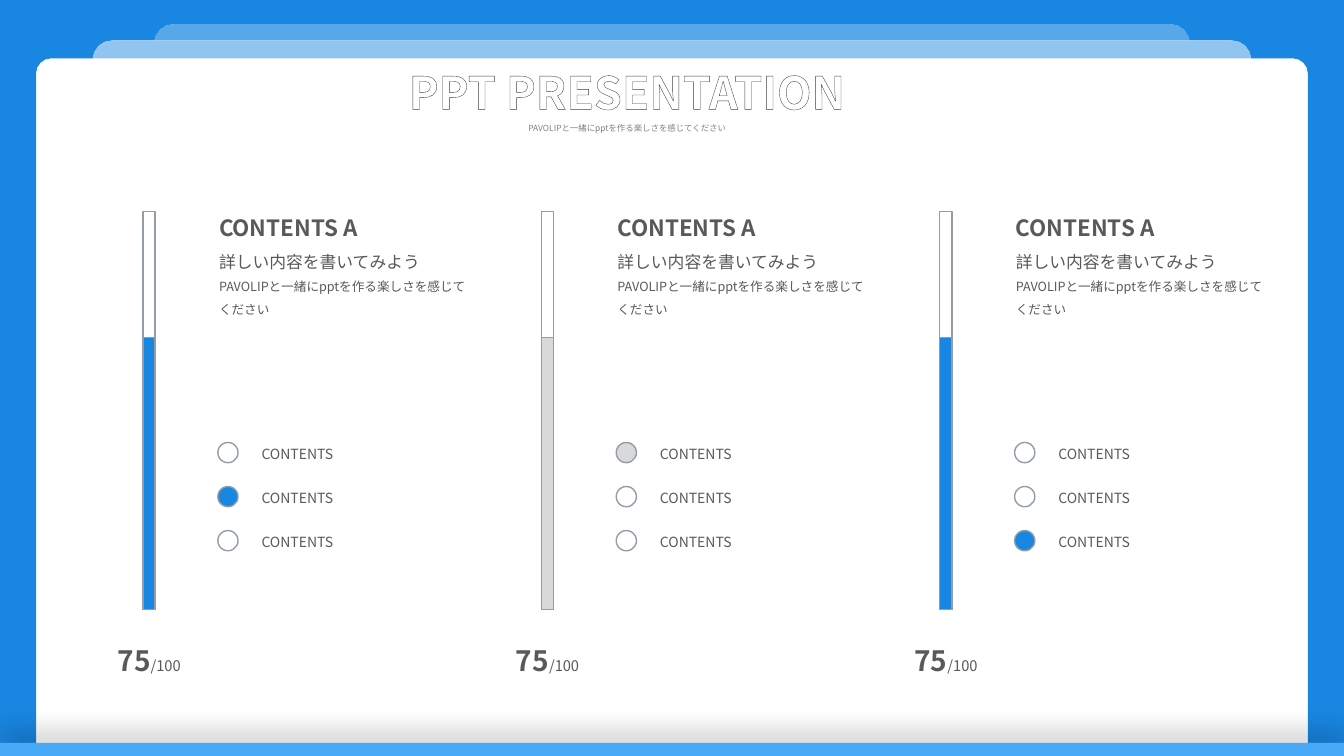
import math

import lxml.etree
import pptx
import pptx.dml.color
import pptx.enum.shapes
import pptx.enum.text
import pptx.oxml
import pptx.oxml.ns
import pptx.util

Cm = pptx.util.Cm
RGBColor = pptx.dml.color.RGBColor
MSO_SHAPE = pptx.enum.shapes.MSO_SHAPE
PP_ALIGN = pptx.enum.text.PP_ALIGN
qn = pptx.oxml.ns.qn

FONT = "Noto Sans CJK KR"
WHITE = RGBColor(0xFF, 0xFF, 0xFF)
BLUE = RGBColor(0x19, 0x86, 0xE1)
MID_BLUE = RGBColor(0x57, 0xA7, 0xE9)
PALE_BLUE = RGBColor(0x91, 0xC5, 0xF1)
BAR_BLUE = RGBColor(0x48, 0xA9, 0xF8)
LIGHT_GREY = RGBColor(0xD9, 0xD9, 0xD9)
LINE_GREY = RGBColor(0x92, 0x9D, 0xA9)
TEXT_GREY = RGBColor(0x59, 0x59, 0x59)
SUB_GREY = RGBColor(0x80, 0x80, 0x80)
OUTLINE_GREY = RGBColor(0x40, 0x40, 0x40)

WIDTH, HEIGHT = 33.87, 19.05
TAGLINE = "PAVOLIPと一緒にpptを作る楽しさを感じてください"


def add_text(tf, text, *, size, color=TEXT_GREY, bold=False, align=PP_ALIGN.LEFT,
             spacing=None, outline=None, same_line=False, wrap=True):
    tf.word_wrap = wrap
    tf.auto_size = pptx.enum.text.MSO_AUTO_SIZE.SHAPE_TO_FIT_TEXT
    p = tf.paragraphs[-1]
    if p.runs and not same_line:
        p = tf.add_paragraph()
    p.alignment = align
    if spacing:
        p.line_spacing = spacing
    r = p.add_run()
    r.text = text
    r.font.size = pptx.util.Pt(size)
    r.font.bold = bold
    r.font.color.rgb = color
    r.font.name = FONT
    rPr = r.font._element
    lxml.etree.SubElement(rPr, qn("a:ea"), typeface=FONT)
    if outline:
        ln = lxml.etree.Element(qn("a:ln"), w="9525")
        fill = lxml.etree.SubElement(ln, qn("a:solidFill"))
        lxml.etree.SubElement(fill, qn("a:srgbClr"), val=str(outline))
        rPr.insert(0, ln)


def paint(sp, fill=None, line=None):
    sp.shadow.inherit = False
    if fill is None:
        sp.fill.background()
    else:
        sp.fill.solid()
        sp.fill.fore_color.rgb = fill
    if line is None:
        sp.line.fill.background()
    else:
        sp.line.color.rgb = line
        sp.line.width = pptx.util.Pt(1)


prs = pptx.Presentation()
prs.slide_width, prs.slide_height = Cm(WIDTH), Cm(HEIGHT)
s = prs.slides.add_slide(prs.slide_layouts[5])

# Title and tagline
title = s.shapes.title
title.left, title.top, title.width, title.height = Cm(9.53), Cm(1.5), Cm(12.55), Cm(1.98)
tf = title.text_frame
tf.vertical_anchor = pptx.enum.text.MSO_ANCHOR.TOP
add_text(tf, "PPT PRESENTATION", size=32, color=WHITE, bold=True,
         align=PP_ALIGN.CENTER, outline=OUTLINE_GREY)
add_text(tf, TAGLINE, size=6, color=SUB_GREY, align=PP_ALIGN.CENTER, spacing=1.5)

# Left edges of the stacked sheets: left, top, bottom, corner radius
edges = []
for left, top, bottom, radius in [(0.91, 1.47, 19.07, 0.38),
                                  (2.34, 1.02, 1.47, 0.48),
                                  (3.89, 0.61, 1.02, 0.48)]:
    edge = [(left, bottom)]
    for step in range(5):
        angle = math.radians(step * 22.5)
        edge.append((left + radius * (1 - math.cos(angle)),
                     min(bottom, top + radius * (1 - math.sin(angle)))))
    edges.append(edge)

# Blue frame around the sheets, then the two sheets behind
stairs = edges[0] + edges[1] + edges[2]
outlines = [
    ([(0, 0), (WIDTH, 0), (WIDTH, 19.07)] + [(WIDTH - x, y) for x, y in stairs]
     + stairs[::-1] + [(0, 19.07)], BLUE)]
for edge, color in [(edges[2], MID_BLUE), (edges[1], PALE_BLUE)]:
    outlines.append((edge + [(WIDTH - x, y) for x, y in edge[::-1]], color))
for points, color in outlines:
    points = [(Cm(x), Cm(y)) for x, y in points]
    fb = s.shapes.build_freeform(*points[0])
    fb.add_line_segments(points[1:])
    paint(fb.convert_to_shape(), color)

# Bottom bar with a shadow cast upwards
sp = s.shapes.add_shape(MSO_SHAPE.ROUND_1_RECTANGLE, 0, Cm(18.72), Cm(WIDTH), Cm(0.38))
sp.adjustments[0] = 0
paint(sp, BAR_BLUE)
effects = sp._element.spPr.find(qn("a:effectLst"))
shadow = lxml.etree.SubElement(effects, qn("a:outerShdw"), blurRad="215900",
                               dist="101600", dir="16200000", algn="b", rotWithShape="0")
shade = lxml.etree.SubElement(shadow, qn("a:srgbClr"), val="000000")
lxml.etree.SubElement(shade, qn("a:alpha"), val="25000")

# Three columns: accent colour and the index of the marked item
for col, (accent, marked) in enumerate([(BLUE, 1), (LIGHT_GREY, 0), (BLUE, 2)]):
    x = col * 10.04

    # Gauge
    for top, height, fill in [(5.33, 10.03, None), (8.5, 6.86, accent)]:
        sp = s.shapes.add_shape(MSO_SHAPE.RECTANGLE, Cm(x + 3.6), Cm(top), Cm(0.31), Cm(height))
        paint(sp, fill, LINE_GREY)

    # Score
    tf = s.shapes.add_textbox(Cm(x + 2.34), Cm(16.08), Cm(2.84), Cm(1.12)).text_frame
    add_text(tf, "75", size=20, bold=True, align=PP_ALIGN.CENTER)
    add_text(tf, "/100", size=10.5, align=PP_ALIGN.CENTER, same_line=True)

    # Item list
    for item in range(3):
        y = item * 1.11
        sp = s.shapes.add_shape(MSO_SHAPE.OVAL, Cm(x + 5.49), Cm(y + 11.15), Cm(0.51), Cm(0.51))
        paint(sp, accent if item == marked else None, LINE_GREY)
        tf = s.shapes.add_textbox(Cm(x + 6.34), Cm(y + 11.09), Cm(2.31), Cm(0.68)).text_frame
        add_text(tf, "CONTENTS", size=10, align=PP_ALIGN.CENTER, wrap=False)

    # Description
    tf = s.shapes.add_textbox(Cm(x + 5.27), Cm(4.94), Cm(6.76), Cm(3.2)).text_frame
    add_text(tf, "CONTENTS A", size=16, bold=True, spacing=1.5)
    add_text(tf, "詳しい内容を書いてみよう", size=12, spacing=1.5)
    add_text(tf, TAGLINE, size=9, spacing=1.5)

prs.save("out.pptx")
